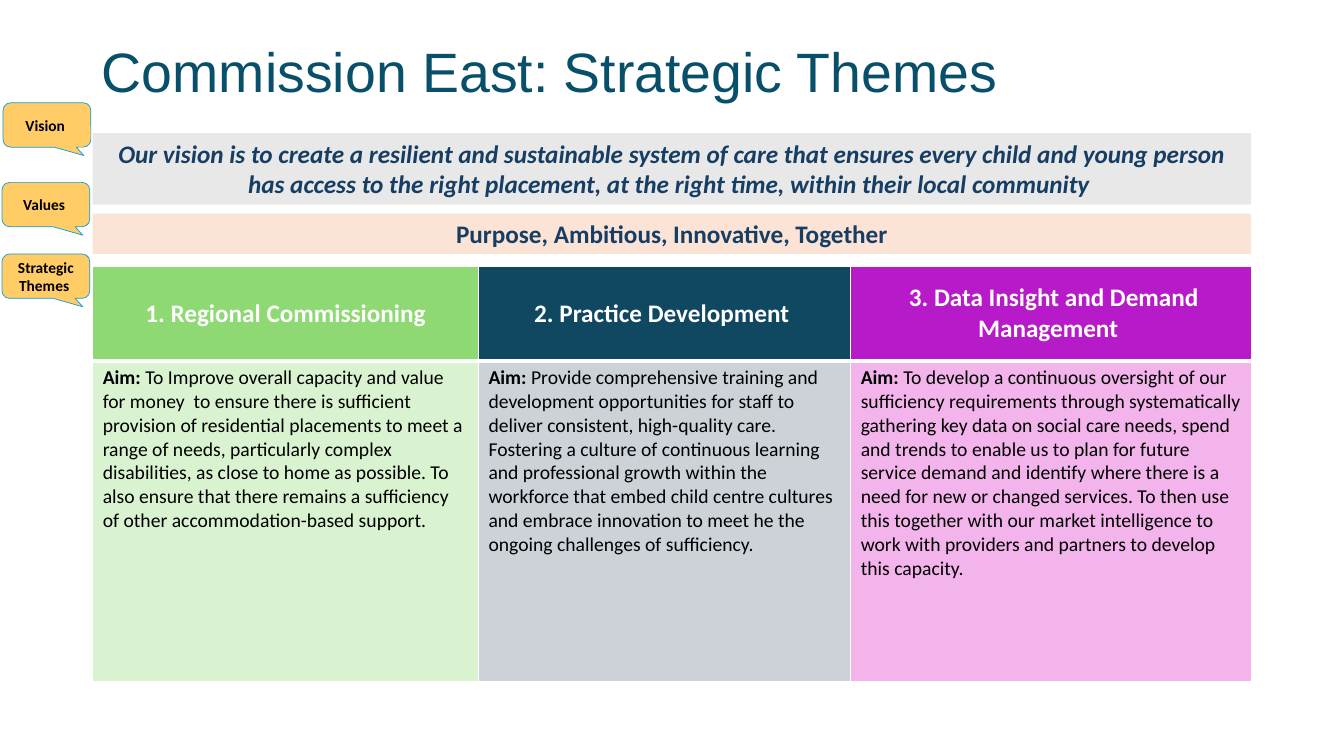
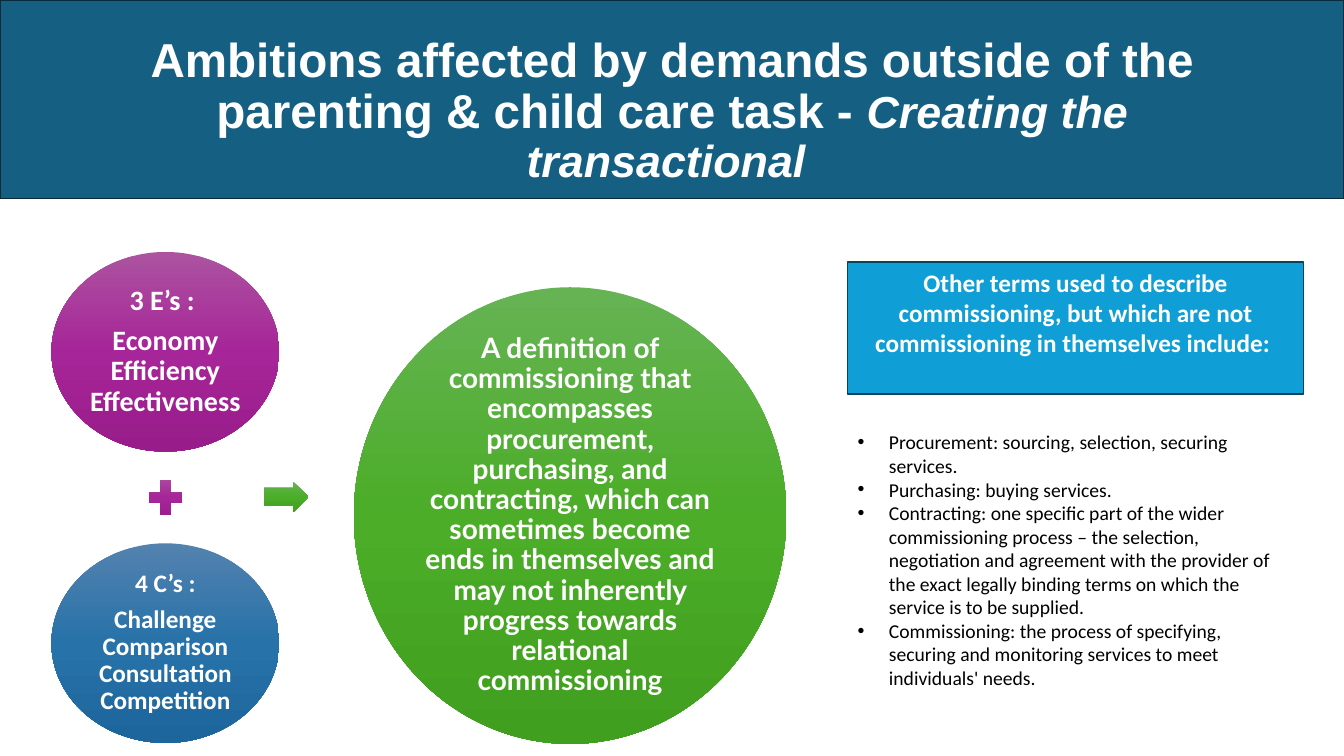
import copy
import dataclasses

import lxml.etree
import pptx
import pptx.dml.color
import pptx.enum.shapes
import pptx.enum.text
import pptx.oxml.ns
import pptx.util

SHAPE = pptx.enum.shapes.MSO_SHAPE
ALIGN = pptx.enum.text.PP_ALIGN
ANCHOR = pptx.enum.text.MSO_ANCHOR
WIDTH = pptx.util.Inches(13.33)
HEIGHT = pptx.util.Inches(7.5)


@dataclasses.dataclass(frozen=True)
class Theme:
    """Colours, fonts and type sizes that the deck shares."""
    title_font: str = "Arial"
    body_font: str = "Calibri"
    circle_font: str = "Lato"
    title: float = 39.6
    band_title: int = 34
    band_subtitle: int = 32
    circle: int = 20
    heading: int = 18
    body: int = 14
    label: int = 11
    white: str = "FFFFFF"
    black: str = "000000"
    title_ink: str = "084F6A"
    navy: str = "163E64"
    band: str = "156082"
    band_line: str = "092A39"
    sky: str = "0F9ED5"
    sky_line: str = "07455D"
    vision: str = "E8E8E8"
    values: str = "FBE3D6"
    callout: str = "FFCC66"
    purple: tuple = ("AC53A0", "A62598", "991C8B")
    blue: tuple = ("5382AF", "2772A9", "1D669C")
    green: tuple = ("66B354", "4BAD28", "409F1E")


THEME = Theme()


@dataclasses.dataclass(frozen=True)
class Span:
    """A piece of text in one style."""
    text: str
    size: float = THEME.body
    color: str = THEME.black
    bold: bool = False
    italic: bool = False
    font: str = THEME.body_font


THEMES = [
    (28.7, "8ED973", "D9F2D0", "1. Regional Commissioning",
     "To Improve overall capacity and value for money  to ensure there is sufficient provision of "
     "residential placements to meet a range of needs, particularly complex disabilities, as close to "
     "home as possible. To also ensure that there remains a sufficiency of other accommodation-based "
     "support."),
    (27.7, "104862", "CCD2D8", "2. Practice Development ",
     "Provide comprehensive training and development opportunities for staff to deliver consistent, "
     "high-quality care. Fostering a culture of continuous learning and professional growth within the "
     "workforce that embed child centre cultures and embrace innovation to meet he the ongoing "
     "challenges of sufficiency."),
    (29.8, "B71AC8", "F2B4EB", " 3. Data Insight and Demand Management ",
     "To develop a continuous oversight of our sufficiency requirements through systematically "
     "gathering key data on social care needs, spend and trends to enable us to plan for future service "
     "demand and identify where there is a need for new or changed services. To then use this together "
     "with our market intelligence to work with providers and partners to develop this capacity."),
]
TERMS = [
    "Procurement: sourcing, selection, securing services.",
    "Purchasing: buying services.",
    "Contracting: one specific part of the wider commissioning process – the selection, negotiation and "
    "agreement with the provider of the exact legally binding terms on which the service is to be supplied.",
    "Commissioning: the process of specifying, securing and monitoring services to meet individuals' needs.",
]
DEFINITION = (
    "A definition of commissioning that encompasses procurement, purchasing, and contracting, which can "
    "sometimes become ends in themselves and may not inherently progress towards relational commissioning"
)


def across(share):
    """Turn a percentage of the slide's width into a length."""
    return int(WIDTH * share / 100)


def down(share):
    """Turn a percentage of the slide's height into a length."""
    return int(HEIGHT * share / 100)


def area(left, top, width, height):
    """Turn percentages of the slide into a position and a size."""
    return across(left), down(top), across(width), down(height)


def rgb(color):
    """Turn a hex string into a colour."""
    return pptx.dml.color.RGBColor.from_string(color)


def write(para, spans, align=ALIGN.LEFT, spacing=None, after=None):
    """Add runs to a paragraph and set its layout."""
    para.alignment = align
    if spacing is not None:
        para.line_spacing = spacing
    if after is not None:
        para.space_after = pptx.util.Pt(after)
    for span in spans:
        run = para.add_run()
        run.text = span.text
        run.font.size = pptx.util.Pt(span.size)
        run.font.name = span.font
        run.font.bold = span.bold
        run.font.italic = span.italic
        run.font.color.rgb = rgb(span.color)


def paragraphs(frame, count):
    """Return the frame's first paragraph and as many new ones as needed."""
    return [frame.paragraphs[0]] + [frame.add_paragraph() for _ in range(count - 1)]


def add_page(deck, place, spans, align=ALIGN.LEFT):
    """Add a title-only slide with a formatted title."""
    page = deck.slides.add_slide(deck.slide_layouts[5])
    title = page.shapes.title
    title.left, title.top, title.width, title.height = area(*place)
    title.text_frame.auto_size = pptx.enum.text.MSO_AUTO_SIZE.NONE
    title.text_frame.vertical_anchor = ANCHOR.MIDDLE
    write(title.text_frame.paragraphs[0], spans, align, 0.9)
    return page


def paint(shape, fill):
    """Fill a shape with one colour or with a downward gradient."""
    if isinstance(fill, str):
        shape.fill.solid()
        shape.fill.fore_color.rgb = rgb(fill)
        return
    shape.fill.gradient()
    shape.fill.gradient_angle = 270
    stops = shape._element.spPr.find(".//" + pptx.oxml.ns.qn("a:gsLst"))
    while len(stops) < len(fill):
        stops.append(copy.deepcopy(stops[0]))
    for index, (stop, color) in enumerate(zip(shape.fill.gradient_stops, fill)):
        stop.position = index / (len(fill) - 1)
        stop.color.rgb = rgb(color)


def add_shape(page, kind, place, fill, line=None, weight=1, adjust=()):
    """Add a filled preset shape."""
    shape = page.shapes.add_shape(kind, *area(*place))
    shape.shadow.inherit = False
    paint(shape, fill)
    if line:
        shape.line.color.rgb = rgb(line)
        shape.line.width = pptx.util.Pt(weight)
    else:
        shape.line.fill.background()
    for index, value in enumerate(adjust):
        shape.adjustments[index] = value
    return shape


def add_panel(page, place, fill, span, line=None):
    """Add a rectangle with centred text at its top."""
    panel = add_shape(page, SHAPE.RECTANGLE, place, fill, line)
    panel.text_frame.vertical_anchor = ANCHOR.TOP
    write(panel.text_frame.paragraphs[0], [span], ALIGN.CENTER)


def add_callout(page, left, top, text):
    """Add a small label that points at its row."""
    callout = add_shape(page, SHAPE.ROUNDED_RECTANGULAR_CALLOUT, (left, top, 6.53, 5.87),
                        THEME.callout, THEME.sky, 0.5, (0.42, 0.69, 0.17))
    callout.text_frame.vertical_anchor = ANCHOR.MIDDLE
    write(callout.text_frame.paragraphs[0], [Span(text, THEME.label, bold=True)], ALIGN.CENTER)


def add_circle(page, place, fill, lines, size, font=THEME.body_font):
    """Add a gradient ellipse with (text, space after) lines."""
    circle = add_shape(page, SHAPE.OVAL, place, fill)
    frame = circle.text_frame
    frame.vertical_anchor = ANCHOR.MIDDLE
    inset = pptx.util.Inches(0.03)
    frame.margin_left = frame.margin_right = frame.margin_top = frame.margin_bottom = inset
    for para, (text, after) in zip(paragraphs(frame, len(lines)), lines):
        write(para, [Span(text, size, THEME.white, True, font=font)], ALIGN.CENTER, 0.9, after)


def add_bullets(page, place, items):
    """Add a bulleted text box."""
    box = page.shapes.add_textbox(*area(*place))
    box.text_frame.word_wrap = True
    for para, item in zip(paragraphs(box.text_frame, len(items)), items):
        props = para._p.get_or_add_pPr()
        indent = pptx.util.Inches(0.31)
        props.set("marL", str(indent))
        props.set("indent", str(-indent))
        font = lxml.etree.SubElement(props, pptx.oxml.ns.qn("a:buFont"))
        font.set("typeface", THEME.title_font)
        lxml.etree.SubElement(props, pptx.oxml.ns.qn("a:buChar")).set("char", "•")
        write(para, [Span(item)])


def set_borders(cell, top, bottom):
    """Give a cell white borders, with its own top and bottom weights."""
    props = cell._tc.get_or_add_tcPr()
    for side, weight in (("L", 1), ("R", 1), ("T", top), ("B", bottom)):
        edge = lxml.etree.SubElement(props, pptx.oxml.ns.qn("a:ln" + side))
        edge.set("w", str(pptx.util.Pt(weight)))
        fill = lxml.etree.SubElement(edge, pptx.oxml.ns.qn("a:solidFill"))
        lxml.etree.SubElement(fill, pptx.oxml.ns.qn("a:srgbClr")).set("val", THEME.white)


def fill_cell(cell, color, spans, align, anchor, top, bottom):
    """Style a table cell and write its text."""
    set_borders(cell, top, bottom)
    paint(cell, color)
    cell.vertical_anchor = anchor
    write(cell.text_frame.paragraphs[0], spans, align)


def add_theme_table(page, place):
    """Add the table with a heading and an aim for each theme."""
    table = page.shapes.add_table(2, len(THEMES), *area(*place)).table
    table.first_row = table.horz_banding = False
    for row, share in zip(table.rows, (12.53, 42.4)):
        row.height = down(share)
    for index, (share, dark, light, heading, aim) in enumerate(THEMES):
        table.columns[index].width = across(share)
        fill_cell(table.cell(0, index), dark, [Span(heading, THEME.heading, THEME.white, True)],
                  ALIGN.CENTER, ANCHOR.MIDDLE, 1, 3)
        fill_cell(table.cell(1, index), light, [Span("Aim: ", bold=True), Span(aim)],
                  ALIGN.LEFT, ANCHOR.TOP, 3, 1)


def build_themes(deck):
    """Build the slide of vision, values and strategic themes."""
    page = add_page(deck, (6.83, 7.47, 86.25, 4.67),
                    [Span("Commission East: Strategic Themes", THEME.title, THEME.title_ink,
                          font=THEME.title_font)])
    add_theme_table(page, (6.9, 35.2, 86.2, 54.93))
    add_panel(page, (6.9, 17.6, 86.2, 9.47), THEME.vision, Span(
        "Our vision is to create a resilient and sustainable system of care that ensures every child and "
        "young person has access to the right placement, at the right time, within their local community ",
        THEME.heading, THEME.navy, True, True))
    add_panel(page, (6.9, 28.27, 86.2, 5.33), THEME.values,
              Span("Purpose, Ambitious, Innovative, Together", THEME.heading, THEME.navy, True))
    for left, top, text in ((0.23, 13.6, "Vision "), (0.15, 24.13, "Values "),
                            (0.15, 33.6, "Strategic Themes ")):
        add_callout(page, left, top, text)


def build_ambitions(deck):
    """Build the slide on the definition of commissioning."""
    page = add_page(deck, (5.78, 3.33, 88.5, 22.93), [
        Span("Ambitions affected by demands outside of the parenting & child care task - ",
             THEME.band_title, THEME.white, True, font=THEME.title_font),
        Span("Creating the transactional ", THEME.band_subtitle, THEME.white, True, True,
             THEME.title_font)], ALIGN.CENTER)
    band = add_shape(page, SHAPE.RECTANGLE, (0, 0, 100, 26.27), THEME.band, THEME.band_line)
    page.shapes.title._element.addprevious(band._element)
    add_bullets(page, (63.08, 56.27, 33.15, 35.87), TERMS)
    add_panel(page, (63.08, 34.67, 33.9, 17.47), THEME.sky, Span(
        "Other terms used to describe commissioning, but which are not commissioning in themselves "
        "include: ", THEME.heading, THEME.white, True), THEME.sky_line)
    add_circle(page, (3.83, 33.33, 16.95, 26.4), THEME.purple,
               [("3 E’s : ", 7), ("Economy", 0), ("Efficiency Effectiveness", 0)], THEME.circle)
    add_shape(page, SHAPE.MATH_PLUS, (10.65, 62.67, 3.3, 6.27), THEME.purple)
    add_circle(page, (3.83, 71.87, 16.95, 26.4), THEME.blue,
               [("4 C’s :", 6), ("Challenge Comparison Consultation Competition", 6)], THEME.heading)
    add_shape(page, SHAPE.RIGHT_ARROW, (19.65, 63.73, 3.3, 4), THEME.green, adjust=(0.6, 0.5))
    add_circle(page, (26.33, 38, 32.18, 60.4), THEME.green, [(DEFINITION, 7)], THEME.circle,
               THEME.circle_font)


def main():
    """Build and save the deck."""
    deck = pptx.Presentation()
    deck.slide_width, deck.slide_height = WIDTH, HEIGHT
    build_themes(deck)
    build_ambitions(deck)
    deck.save("out.pptx")


if __name__ == "__main__":
    main()
